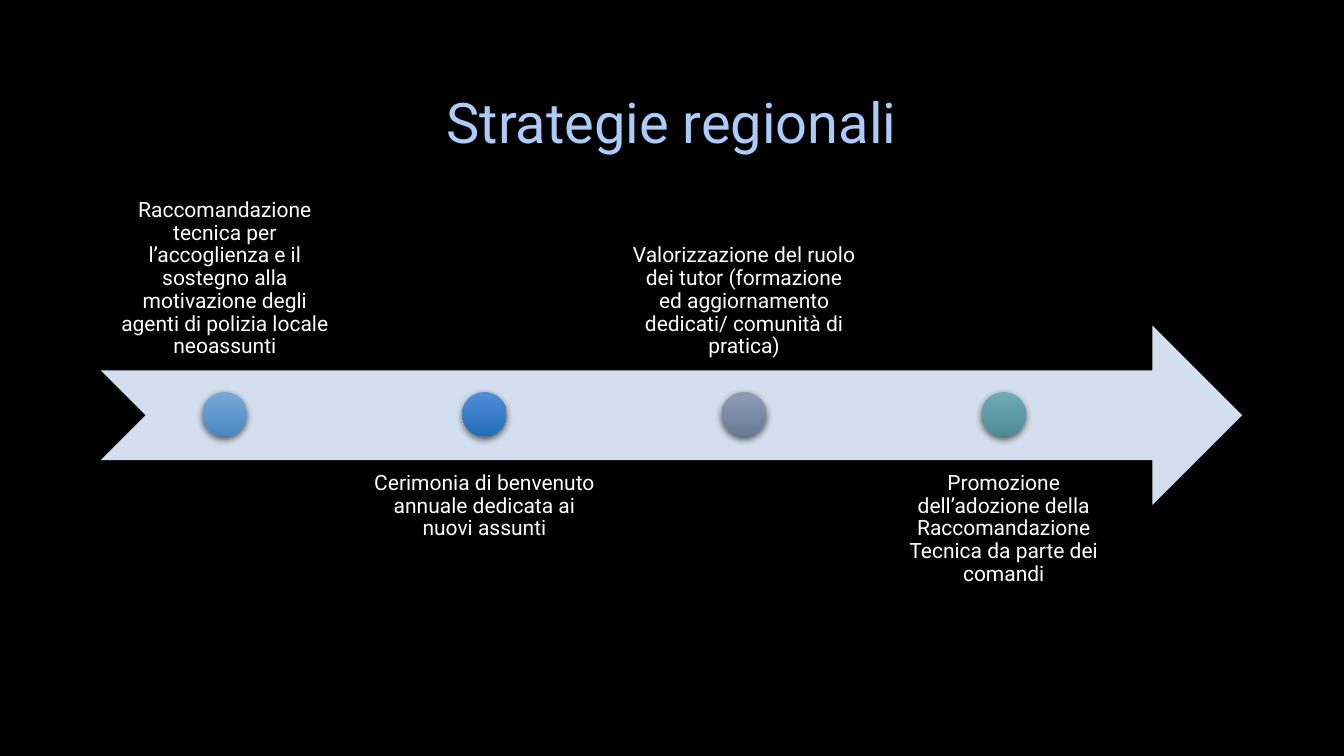
from dataclasses import dataclass

from lxml import etree
from pptx import Presentation
from pptx.dml.color import RGBColor
from pptx.enum.shapes import MSO_SHAPE
from pptx.enum.text import MSO_ANCHOR, PP_ALIGN
from pptx.oxml.ns import qn
from pptx.util import Inches, Pt

ARROW, DOT = MSO_SHAPE.NOTCHED_RIGHT_ARROW, MSO_SHAPE.OVAL
TOP, MIDDLE, BOTTOM = MSO_ANCHOR.TOP, MSO_ANCHOR.MIDDLE, MSO_ANCHOR.BOTTOM
CENTER = PP_ALIGN.CENTER
TITLE_ONLY = 5


@dataclass(frozen=True)
class Theme:
    font: str = "Roboto"
    title_size: int = 40
    step_size: int = 15
    background: str = "000000"
    title: str = "ACCBF9"
    text: str = "FFFFFF"
    arrow: str = "D3DFEE"
    shadow: str = "000000"


THEME = Theme()

# Timeline grid, in inches
LEFT, WIDTH = 1, 11.32
ARROW_TOP, ROW = 3.23, 1.78
FIRST_CENTER, PITCH = 2.23, 2.575
LABEL_WIDTH, LABEL_INSET = 2.45, 0.12
LABEL_SHIFT = 0.75 * ROW
DOT_SIZE, DOT_TOP = 0.44, 3.89

STEPS = [
    ("Raccomandazione tecnica per l’accoglienza e il sostegno alla motivazione "
     "degli agenti di polizia locale neoassunti", ("78A9D6", "4888C0")),
    ("Cerimonia di benvenuto annuale dedicata ai nuovi assunti",
     ("518ED9", "236DB7")),
    ("Valorizzazione del ruolo dei tutor (formazione ed aggiornamento dedicati/ "
     "comunità di pratica)", ("8F9CB3", "697A96")),
    ("Promozione dell’adozione della Raccomandazione Tecnica da parte dei comandi",
     ("70ABB6", "4D8B96")),
]


def rgb(color):
    return RGBColor.from_string(color)


def inches(*lengths):
    return [Inches(length) for length in lengths]


def write(frame, text, size, color, anchor):
    """Fill a frame with one centred paragraph."""
    frame.word_wrap = True
    frame.vertical_anchor = anchor
    frame.text = text
    paragraph = frame.paragraphs[0]
    paragraph.alignment = CENTER
    font = paragraph.runs[0].font
    font.name, font.size = THEME.font, Pt(size)
    font.color.rgb = rgb(color)
    return paragraph


def add_soft_shadow(shape):
    """Cast a short blurred shadow straight down."""
    shape.shadow.inherit = False
    effects = shape._element.spPr.find(qn("a:effectLst"))
    shadow = etree.SubElement(
        effects, qn("a:outerShdw"), blurRad=str(Pt(5)), dist=str(Pt(2)),
        dir="5400000", algn="ctr", rotWithShape="0")
    color = etree.SubElement(shadow, qn("a:srgbClr"), val=THEME.shadow)
    etree.SubElement(color, qn("a:alpha"), val="60000")


def add_title(slide, text):
    title = slide.shapes.title
    title.left, title.top, title.width, title.height = inches(LEFT, 0.67, WIDTH, 1.06)
    write(title.text_frame, text, THEME.title_size, THEME.title, MIDDLE)


def add_arrow(shapes):
    arrow = shapes.add_shape(ARROW, *inches(LEFT, ARROW_TOP, WIDTH, ROW))
    arrow.fill.solid()
    arrow.fill.fore_color.rgb = rgb(THEME.arrow)
    arrow.line.fill.background()
    add_soft_shadow(arrow)


def add_label(shapes, center, text, above):
    top = ARROW_TOP + (-LABEL_SHIFT if above else LABEL_SHIFT)
    label = shapes.add_textbox(
        *inches(center - LABEL_WIDTH / 2, top, LABEL_WIDTH, ROW))
    frame = label.text_frame
    frame.margin_left = frame.margin_right = Inches(LABEL_INSET)
    frame.margin_top = frame.margin_bottom = Inches(LABEL_INSET)
    paragraph = write(frame, text, THEME.step_size, THEME.text,
                      BOTTOM if above else TOP)
    paragraph.line_spacing = 0.9


def add_dot(shapes, center, gradient):
    dot = shapes.add_shape(
        DOT, *inches(center - DOT_SIZE / 2, DOT_TOP, DOT_SIZE, DOT_SIZE))
    dot.fill.gradient()
    dot.fill.gradient_angle = 270
    for position, (stop, color) in enumerate(zip(dot.fill.gradient_stops, gradient)):
        stop.position = position
        stop.color.rgb = rgb(color)
    dot.line.fill.background()
    add_soft_shadow(dot)


def main():
    deck = Presentation()
    deck.slide_width, deck.slide_height = inches(13.33, 7.5)
    slide = deck.slides.add_slide(deck.slide_layouts[TITLE_ONLY])
    slide.background.fill.solid()
    slide.background.fill.fore_color.rgb = rgb(THEME.background)

    add_title(slide, "Strategie regionali")
    timeline = slide.shapes.add_group_shape().shapes
    add_arrow(timeline)
    for column, (text, gradient) in enumerate(STEPS):
        center = FIRST_CENTER + column * PITCH
        add_label(timeline, center, text, above=column % 2 == 0)
        add_dot(timeline, center, gradient)
    deck.save("out.pptx")


if __name__ == "__main__":
    main()
